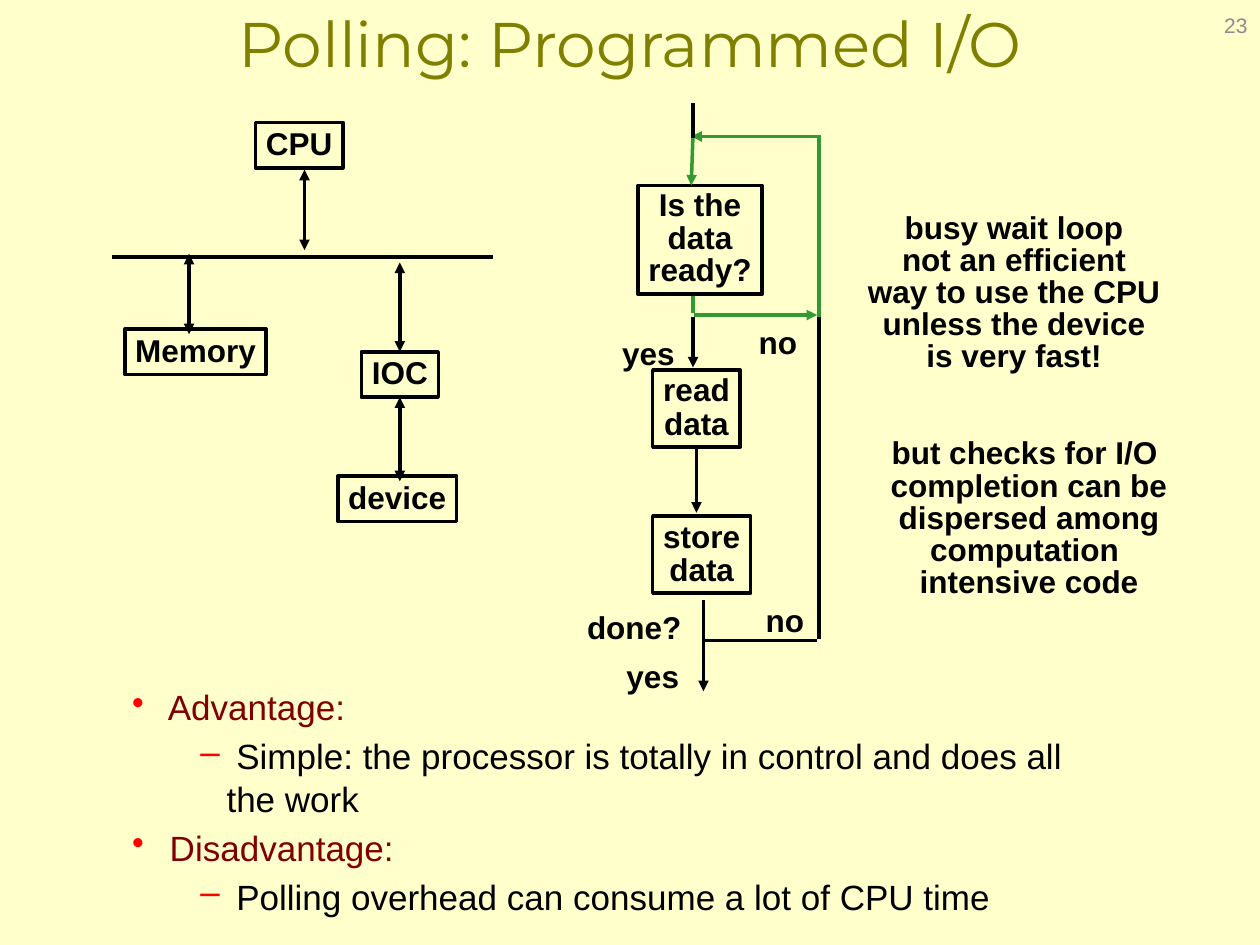
"""Build a slide that explains polling as a form of programmed I/O."""
from dataclasses import dataclass

from lxml.etree import SubElement
from pptx import Presentation
from pptx.dml.color import RGBColor as RGB
from pptx.enum.shapes import MSO_CONNECTOR as Link, MSO_SHAPE as Preset
from pptx.enum.text import MSO_ANCHOR as Anchor, MSO_AUTO_SIZE as Fit, PP_ALIGN as Align
from pptx.oxml.ns import qn
from pptx.util import Pt

TOP, BOTTOM = 0, 2


@dataclass(frozen=True)
class Theme:
    paper: RGB = RGB(0xFF, 0xFF, 0xCC)
    ink: RGB = RGB(0, 0, 0)
    olive: RGB = RGB(0x80, 0x80, 0)
    maroon: RGB = RGB(0x80, 0, 0)
    red: RGB = RGB(0xFF, 0, 0)
    green: RGB = RGB(0x33, 0x99, 0x33)
    grey: RGB = RGB(0x8C, 0x8C, 0x8C)
    heading: str = "Montserrat"
    body: str = "Arial"
    title_size: int = 36
    point_size: int = 20
    label_size: int = 18
    number_size: int = 12
    stroke: int = 2


def assign(target, values):
    for name, value in values.items():
        setattr(target, name, value)


class Board:
    def __init__(self, slide, theme):
        self.slide, self.theme = slide, theme
        self.canvas = slide.shapes
        slide.background.fill.solid()
        slide.background.fill.fore_color.rgb = theme.paper

    def group(self):
        self.canvas = self.slide.shapes.add_group_shape().shapes

    def ungroup(self):
        self.canvas = self.slide.shapes

    def frame(self, shape, **changes):
        assign(shape.text_frame, {
            "word_wrap": False, "auto_size": Fit.SHAPE_TO_FIT_TEXT,
            "vertical_anchor": Anchor.TOP,
            "margin_left": Pt(5), "margin_right": Pt(5),
            "margin_top": Pt(2.5), "margin_bottom": Pt(2.5), **changes})
        return shape.text_frame

    def fill_text(self, frame, lines, paragraph_format, font_format, color):
        for index, line in enumerate(lines):
            paragraph = frame.add_paragraph() if index else frame.paragraphs[0]
            assign(paragraph, paragraph_format)
            run = paragraph.add_run()
            run.text = line
            assign(run.font, font_format)
            run.font.color.rgb = color

    def label_font(self):
        return {"name": self.theme.body, "size": Pt(self.theme.label_size), "bold": True}

    def box(self, place, lines, spacing):
        shape = self.canvas.add_shape(Preset.RECTANGLE, *map(Pt, place))
        shape.shadow.inherit = False
        shape.fill.background()
        shape.line.color.rgb = self.theme.ink
        shape.line.width = Pt(self.theme.stroke)
        self.fill_text(self.frame(shape, vertical_anchor=Anchor.MIDDLE), lines,
                       {"alignment": Align.CENTER, "line_spacing": spacing},
                       self.label_font(), self.theme.ink)
        return shape

    def label(self, place, lines, align=Align.LEFT):
        shape = self.canvas.add_textbox(*map(Pt, place))
        self.fill_text(self.frame(shape), lines,
                       {"alignment": align, "line_spacing": 0.85},
                       self.label_font(), self.theme.ink)

    def title(self, place, text):
        shape = self.canvas.add_textbox(*map(Pt, place))
        self.fill_text(self.frame(shape, word_wrap=True), [text],
                       {"alignment": Align.CENTER},
                       {"name": self.theme.heading, "size": Pt(self.theme.title_size)},
                       self.theme.olive)

    def page_number(self, place, text):
        shape = self.canvas.add_textbox(*map(Pt, place))
        self.fill_text(self.frame(shape, word_wrap=True, auto_size=Fit.NONE,
                                  vertical_anchor=Anchor.MIDDLE,
                                  margin_left=Pt(7.2), margin_right=Pt(7.2)),
                       [text], {"alignment": Align.RIGHT},
                       {"name": self.theme.body, "size": Pt(self.theme.number_size)},
                       self.theme.grey)

    def points(self, place, items):
        levels = [("•", 16, -16, self.theme.maroon), ("–", 54, -15, self.theme.ink)]
        frame = self.frame(self.canvas.add_textbox(*map(Pt, place)), word_wrap=True)
        for index, (level, text) in enumerate(items):
            mark, margin, indent, color = levels[level]
            paragraph = frame.add_paragraph() if index else frame.paragraphs[0]
            assign(paragraph, {"level": level, "space_before": Pt(4)})
            properties = paragraph._p.get_or_add_pPr()
            properties.set("marL", str(Pt(margin)))
            properties.set("indent", str(Pt(indent)))
            tint = SubElement(properties, qn("a:buClr"))
            SubElement(tint, qn("a:srgbClr"), val=str(self.theme.red))
            SubElement(properties, qn("a:buChar"), char=mark)
            run = paragraph.add_run()
            run.text = text
            assign(run.font, {"name": self.theme.body, "size": Pt(self.theme.point_size)})
            run.font.color.rgb = color

    def line(self, ends, color=None, arrows=(), begin=None, end=None):
        link = self.canvas.add_connector(Link.STRAIGHT, *map(Pt, ends))
        link.line.color.rgb = color or self.theme.ink
        link.line.width = Pt(self.theme.stroke)
        properties = link._element.spPr
        for arrow in arrows:
            SubElement(properties.find(qn("a:ln")), qn(f"a:{arrow}"), type="triangle")
        SubElement(properties, qn("a:effectLst"))
        if begin:
            link.begin_connect(*begin)
        if end:
            link.end_connect(*end)


def draw_bus(board):
    both = ("headEnd", "tailEnd")
    board.group()
    parts = {name: board.box((left, top, width, 26), [name], 0.92)
             for name, left, top, width in [
                 ("CPU", 146, 70, 50), ("IOC", 206.5, 201, 44),
                 ("device", 193, 272, 68), ("Memory", 71.5, 188, 80.5)]}
    board.line((64, 147, 282, 147))
    board.line((174, 97, 174, 143), arrows=both)
    board.line((108, 145, 108, 191), arrows=both)
    board.line((228.5, 150, 228.5, 197), arrows=both, end=(parts["IOC"], TOP))
    board.line((228.5, 229, 228.5, 275), arrows=both, begin=(parts["IOC"], BOTTOM))
    board.ungroup()


def draw_loop(board):
    green, arrow = board.theme.green, ("tailEnd",)
    board.box((364.5, 106, 71, 62), ["Is the", "data", "ready?"], 0.86)
    read = board.box((373, 211.5, 50, 44), ["read", "data"], 0.88)
    board.box((373, 295, 56, 44), ["store", "data"], 0.88)

    board.line((396, 181, 396, 210), arrows=arrow)
    board.line((398, 257, 398, 293), arrows=arrow, begin=(read, BOTTOM))
    board.line((396, 77, 395, 106), green, arrow)
    board.line((403, 366, 467, 366))
    board.line((468, 181, 468, 77), green)
    board.line((468.5, 78, 395, 78), green, arrow)
    board.line((396.5, 180, 467, 180), green, arrow)
    board.line((402, 343, 402, 395), arrows=arrow)
    board.line((468, 181, 468, 365))
    board.line((396, 169, 396, 179), green)
    board.line((396, 79, 396, 59))

    for text, left, top, width in [
            ("yes", 350.5, 191.5, 40), ("no", 428.5, 185.5, 32),
            ("done?", 330.5, 348, 64), ("no", 432.5, 344, 32), ("yes", 353, 376.5, 40)]:
        board.label((left, top, width, 22), [text])


def main():
    deck = Presentation()
    assign(deck, {"slide_width": Pt(720), "slide_height": Pt(540)})
    board = Board(deck.slides.add_slide(deck.slide_layouts[6]), Theme())
    board.title((0, 0, 720, 47.5), "Polling: Programmed I/O")
    board.points((70.5, 389.5, 559, 138), [
        (0, " Advantage:"),
        (1, " Simple: the processor is totally in control and does all the work"),
        (0, " Disadvantage:"),
        (1, " Polling overhead can consume a lot of CPU time")])
    draw_bus(board)
    draw_loop(board)
    board.label((491, 119.5, 177, 96), [
        "busy wait loop", "not an efficient", "way to use the CPU",
        "unless the device", "is very fast!"], Align.CENTER)
    board.label((504, 248.5, 168, 96), [
        "but checks for I/O ", "completion can be", "dispersed among",
        "computation ", "intensive code"], Align.CENTER)
    board.page_number((552, 0, 168, 29), "23")
    deck.save("out.pptx")


if __name__ == "__main__":
    main()
